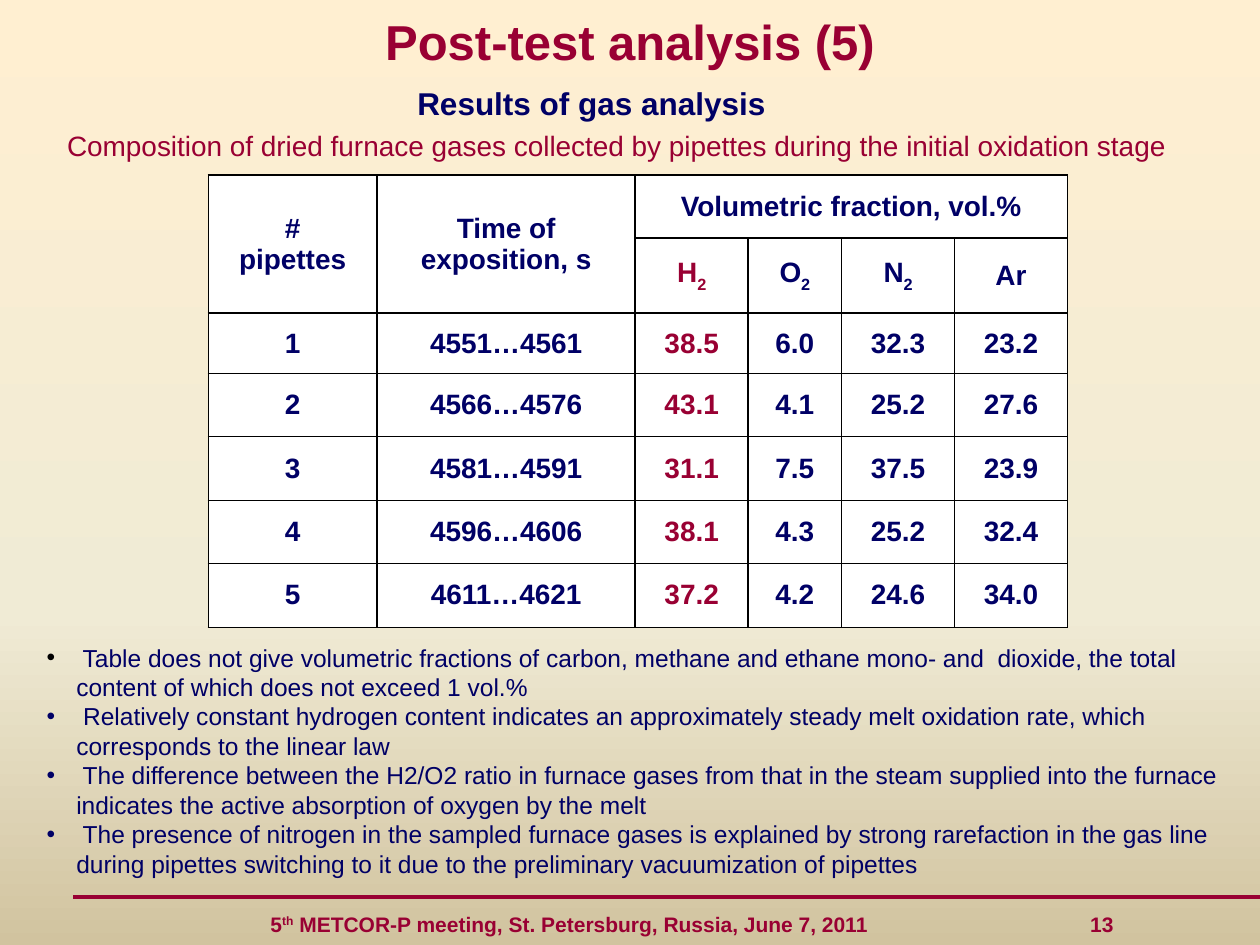
"""Build the gas analysis results slide with its table and conclusions."""
from dataclasses import dataclass

from lxml import etree
from pptx import Presentation
from pptx import util as u
from pptx.dml.color import RGBColor
from pptx.enum import shapes, text
from pptx.oxml.ns import qn

Pt = u.Pt


@dataclass(frozen=True)
class Theme:
    font: str = "Arial"
    red: str = "990033"
    navy: str = "000066"
    black: str = "000000"
    white: str = "FFFFFF"
    background: tuple = ((0, "FFEFD1"), (65, "F0EBD5"), (100, "D1C39F"))
    title: int = 28
    subtitle: int = 18
    table: int = 16
    body: int = 14
    footer: int = 12


THEME = Theme()
CENTER, LEFT = text.PP_ALIGN.CENTER, text.PP_ALIGN.LEFT
MIDDLE, TOP = text.MSO_ANCHOR.MIDDLE, text.MSO_ANCHOR.TOP

TITLE = "Post-test analysis (5)"
SUBTITLE = "Results of gas analysis"
CAPTION = "Composition of dried furnace gases collected by pipettes during the initial oxidation stage"
FOOTER = [("5", 0), ("th", 30), (" METCOR-P meeting, St. Petersburg, Russia, June 7, 2011\t13", 0)]
CONCLUSIONS = [
    " Table does not give volumetric fractions of carbon, methane and ethane mono- and  dioxide, "
    "the total content of which does not exceed 1 vol.%",
    " Relatively constant hydrogen content indicates an approximately steady melt oxidation rate, "
    "which corresponds to the linear law",
    " The difference between the H2/O2 ratio in furnace gases from that in the steam supplied into "
    "the furnace indicates the active absorption of oxygen by the melt",
    " The presence of nitrogen in the sampled furnace gases is explained by strong rarefaction in the "
    "gas line during pipettes switching to it due to the preliminary vacuumization of pipettes",
]
HEADER = [["#", "pipettes"], ["Time of exposition, s"], ["Volumetric fraction, vol.%"], None, None, None]
GASES = [None, None] + [[[(gas, 0), ("2", -30)]] for gas in "HON"] + [["Ar"]]
MEASUREMENTS = [
    ("1", "4551…4561", "38.5", "6.0", "32.3", "23.2"),
    ("2", "4566…4576", "43.1", "4.1", "25.2", "27.6"),
    ("3", "4581…4591", "31.1", "7.5", "37.5", "23.9"),
    ("4", "4596…4606", "38.1", "4.3", "25.2", "32.4"),
    ("5", "4611…4621", "37.2", "4.2", "24.6", "34.0"),
]
TABLE_ROWS = [HEADER, GASES] + [[[value] for value in row] for row in MEASUREMENTS]
HYDROGEN_COLUMN = 2
MERGES = [((0, 0), (1, 0)), ((0, 1), (1, 1)), ((0, 2), (0, 5))]
COLUMN_WIDTHS = [96.5, 147.5, 64.5, 53.5, 64.5, 64.5]
ROW_HEIGHTS = [36, 43, 34.5, 36, 36.5, 36, 36.5]


def add_element(parent, tag, index=None, **attributes):
    element = etree.Element(qn(tag), {name: str(value) for name, value in attributes.items()})
    parent.insert(len(parent) if index is None else index, element)
    return element


def write(frame, lines, size, color, bold=False, align=CENTER, anchor=TOP):
    """Write each line, a string or a list of (text, baseline) runs, as a paragraph."""
    frame.word_wrap = True
    frame.vertical_anchor = anchor
    for number, line in enumerate(lines):
        paragraph = frame.add_paragraph() if number else frame.paragraphs[0]
        paragraph.alignment = align
        for words, baseline in [(line, 0)] if isinstance(line, str) else line:
            run = paragraph.add_run()
            run.text = words
            run.font.name, run.font.size, run.font.bold = THEME.font, Pt(size), bold
            run.font.color.rgb = RGBColor.from_string(color)
            if baseline:
                run.font._element.set("baseline", str(baseline * 1000))


def place(shape, left, top, width, height):
    shape.left, shape.top, shape.width, shape.height = map(Pt, (left, top, width, height))
    shape.text_frame.auto_size = text.MSO_AUTO_SIZE.NONE
    return shape.text_frame


def add_text(slide, box, *args, **kwargs):
    frame = place(slide.shapes.add_textbox(0, 0, 0, 0), *box)
    write(frame, *args, **kwargs)
    return frame


def paint_background(slide):
    slide.background.fill.gradient()
    gradient = slide.element.find(".//" + qn("a:gradFill"))
    for child in list(gradient):
        gradient.remove(child)
    stops = add_element(gradient, "a:gsLst")
    for position, color in THEME.background:
        add_element(add_element(stops, "a:gs", pos=position * 1000), "a:srgbClr", val=color)
    add_element(gradient, "a:lin", ang=90 * 60000, scaled=0)


def add_footer(slide):
    rule = slide.shapes.add_connector(shapes.MSO_CONNECTOR.STRAIGHT, Pt(41.8), Pt(512.6), Pt(720), Pt(512.6))
    rule.line.color.rgb = RGBColor.from_string(THEME.red)
    rule.line.width = Pt(2.25)
    add_element(rule._element.spPr, "a:effectLst")
    frame = add_text(slide, (144, 509.8, 517, 36), [FOOTER], THEME.footer, THEME.red,
                     bold=True, align=LEFT, anchor=MIDDLE)
    frame.margin_left = Pt(10.5)
    tabs = add_element(frame.paragraphs[0]._p.get_or_add_pPr(), "a:tabLst")
    add_element(tabs, "a:tab", pos=Pt(468.5), algn="l")


def add_conclusions(slide):
    frame = place(slide.placeholders[1], 19.4, 363.6, 685.5, 158.4)
    write(frame, CONCLUSIONS, THEME.body, THEME.navy, align=LEFT)
    for number, paragraph in enumerate(frame.paragraphs):
        paragraph.space_before = Pt(0)
        paragraph.line_spacing = Pt(16.8)
        properties = paragraph._p.get_or_add_pPr()
        properties.set("marL", str(Pt(17)))
        properties.set("indent", str(Pt(-17)))
        color = THEME.navy if number else THEME.black
        add_element(add_element(properties, "a:buClr"), "a:srgbClr", val=color)
        add_element(properties, "a:buFont", typeface=THEME.font)
        add_element(properties, "a:buChar", char="•")


def style_cell(cell):
    cell.fill.solid()
    cell.fill.fore_color.rgb = RGBColor.from_string(THEME.white)
    properties = cell._tc.get_or_add_tcPr()
    for index, side in enumerate("LRTB"):
        border = add_element(properties, f"a:ln{side}", index, w=Pt(1))
        add_element(add_element(border, "a:solidFill"), "a:srgbClr", val=THEME.black)


def add_gas_table(slide):
    frame = slide.shapes.add_table(len(ROW_HEIGHTS), len(COLUMN_WIDTHS), Pt(119), Pt(100),
                                   Pt(sum(COLUMN_WIDTHS)), Pt(sum(ROW_HEIGHTS)))
    table = frame.table
    table.first_row = table.horz_banding = False
    for column, width in zip(table.columns, COLUMN_WIDTHS):
        column.width = Pt(width)
    for row, height in zip(table.rows, ROW_HEIGHTS):
        row.height = Pt(height)
    for start, end in MERGES:
        table.cell(*start).merge(table.cell(*end))
    for row, values in enumerate(TABLE_ROWS):
        for column, lines in enumerate(values):
            cell = table.cell(row, column)
            style_cell(cell)
            if lines:
                color = THEME.red if row and column == HYDROGEN_COLUMN else THEME.navy
                write(cell.text_frame, lines, THEME.table, color, bold=True)
                cell.vertical_anchor = MIDDLE


def main():
    presentation = Presentation()
    presentation.slide_width, presentation.slide_height = Pt(720), Pt(540)
    slide = presentation.slides.add_slide(presentation.slide_layouts[1])
    paint_background(slide)
    add_footer(slide)
    write(place(slide.shapes.title, 0, 0, 720, 46.8), [TITLE], THEME.title, THEME.red,
          bold=True, anchor=MIDDLE)
    add_text(slide, (186.5, 46, 303, 26), [SUBTITLE], THEME.subtitle, THEME.navy, bold=True, anchor=MIDDLE)
    add_conclusions(slide)
    add_gas_table(slide)
    add_text(slide, (19.4, 70, 666, 26), [CAPTION], THEME.table, THEME.red)
    presentation.save("out.pptx")


if __name__ == "__main__":
    main()
